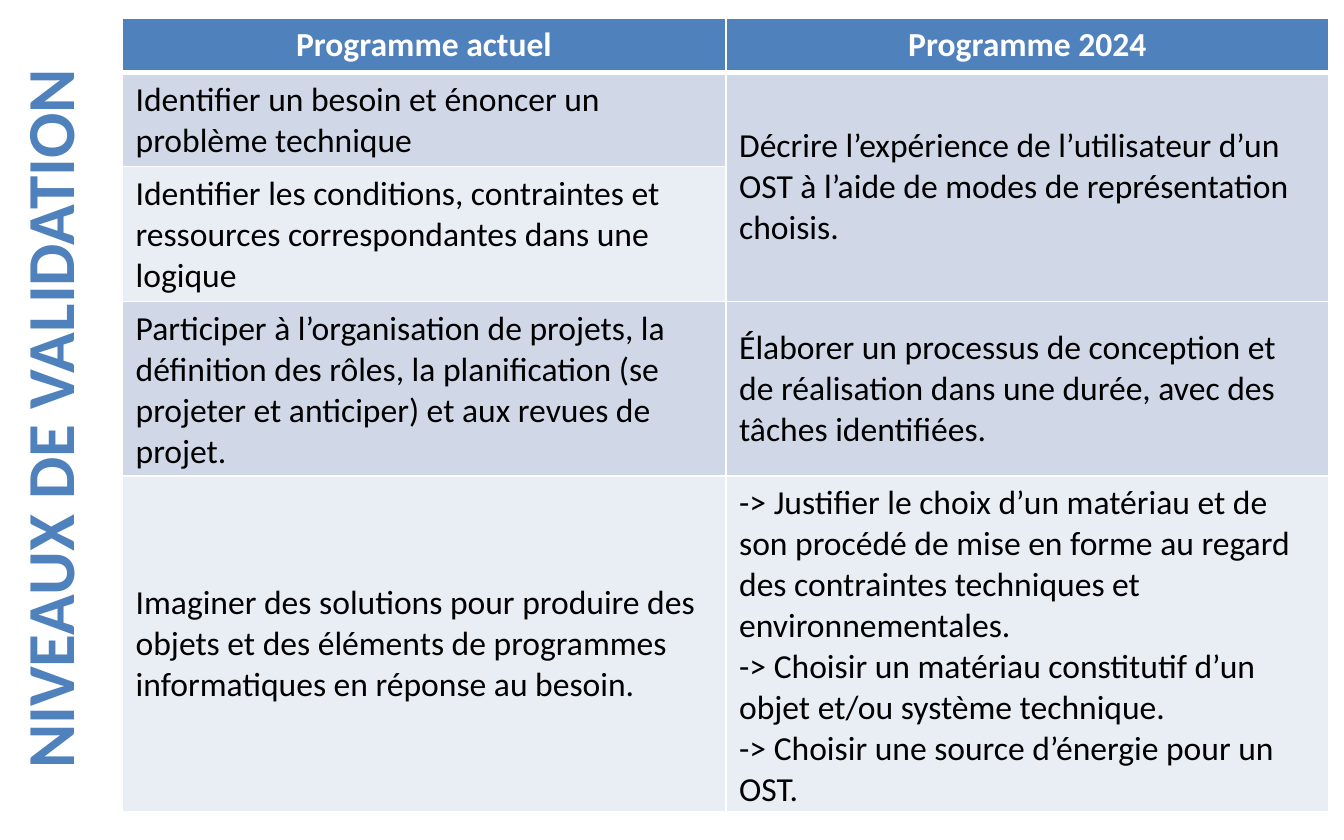
from dataclasses import dataclass

from lxml import etree
from pptx import Presentation
from pptx.dml.color import RGBColor
from pptx.enum.text import MSO_ANCHOR, PP_ALIGN
from pptx.oxml.ns import qn
from pptx.util import Cm, Pt

CENTER, LEFT = PP_ALIGN.CENTER, PP_ALIGN.LEFT
TOP, MIDDLE = MSO_ANCHOR.TOP, MSO_ANCHOR.MIDDLE
FONT = "Calibri"
COLORS = {
    "blue": "4F81BD",
    "dark band": "D0D8E8",
    "light band": "E9EDF4",
    "white": "FFFFFF",
    "black": "000000",
}


@dataclass
class Row:
    height: float  # cm
    fill: str
    current: str
    new: str  # empty when merged with the cell above
    header: bool = False


ROWS = [
    Row(1.03, "blue", "Programme actuel", "Programme 2024", header=True),
    Row(1.78, "dark band",
        "Identifier un besoin et énoncer un problème technique",
        "Décrire l’expérience de l’utilisateur d’un OST à l’aide de modes "
        "de représentation choisis."),
    Row(2.55, "light band",
        "Identifier les conditions, contraintes et ressources "
        "correspondantes dans une logique", ""),
    Row(3.3, "dark band",
        "Participer à l’organisation de projets, la définition des rôles, "
        "la planification (se projeter et anticiper) et aux revues de projet.",
        "Élaborer un processus de conception et de réalisation dans une "
        "durée, avec des tâches identifiées."),
    Row(6.33, "light band",
        "Imaginer des solutions pour produire des objets et des éléments de "
        "programmes informatiques en réponse au besoin.",
        "-> Justifier le choix d’un matériau et de son procédé de mise en "
        "forme au regard des contraintes techniques et environnementales.\n"
        "-> Choisir un matériau constitutif d’un objet et/ou système "
        "technique.\n"
        "-> Choisir une source d’énergie pour un OST."),
]


def write(tf, text: str, size: int, color: str, bold: bool, align) -> None:
    tf.text = text
    for p in tf.paragraphs:
        p.alignment = align
        p.font.name = FONT
        p.font.size = Pt(size)
        p.font.bold = bold
        p.font.color.rgb = RGBColor.from_string(COLORS[color])


def set_borders(cell, bottom: int) -> None:
    """White borders, one point wide except below; they precede the fill."""
    tc_pr = cell._tc.get_or_add_tcPr()
    widths = {"a:lnL": 1, "a:lnR": 1, "a:lnT": 1, "a:lnB": bottom}
    for i, (tag, width) in enumerate(widths.items()):
        ln = etree.Element(qn(tag), w=str(Pt(width)))
        fill = etree.SubElement(ln, qn("a:solidFill"))
        etree.SubElement(fill, qn("a:srgbClr"), val=COLORS["white"])
        tc_pr.insert(i, ln)


def fill_cell(cell, row: Row, text: str) -> None:
    cell.fill.solid()
    cell.fill.fore_color.rgb = RGBColor.from_string(COLORS[row.fill])
    set_borders(cell, 3 if row.header else 1)
    cell.vertical_anchor = TOP if row.header else MIDDLE
    write(cell.text_frame, text, 18, "white" if row.header else "black",
          row.header, CENTER if row.header else LEFT)


prs = Presentation()
prs.slide_width, prs.slide_height = Cm(25.4), Cm(15.88)
s = prs.slides.add_slide(prs.slide_layouts[6])

# Vertical title
title = s.shapes.add_textbox(Cm(-7.06), Cm(7.02), Cm(15.93), Cm(1.8))
title.rotation = 270
title.text_frame.word_wrap = True
write(title.text_frame, "NIVEAUX DE VALIDATION", 36, "blue", True, CENTER)

# Comparison of the two programmes
table = s.shapes.add_table(len(ROWS), 2, Cm(2.31), Cm(0.34), Cm(22.81),
                           Cm(sum(row.height for row in ROWS))).table
for i, row in enumerate(ROWS):
    table.rows[i].height = Cm(row.height)
    for j, text in enumerate((row.current, row.new)):
        fill_cell(table.cell(i, j), row, text)
    if not row.new:
        table.cell(i - 1, 1).merge(table.cell(i, 1))

prs.save("out.pptx")
